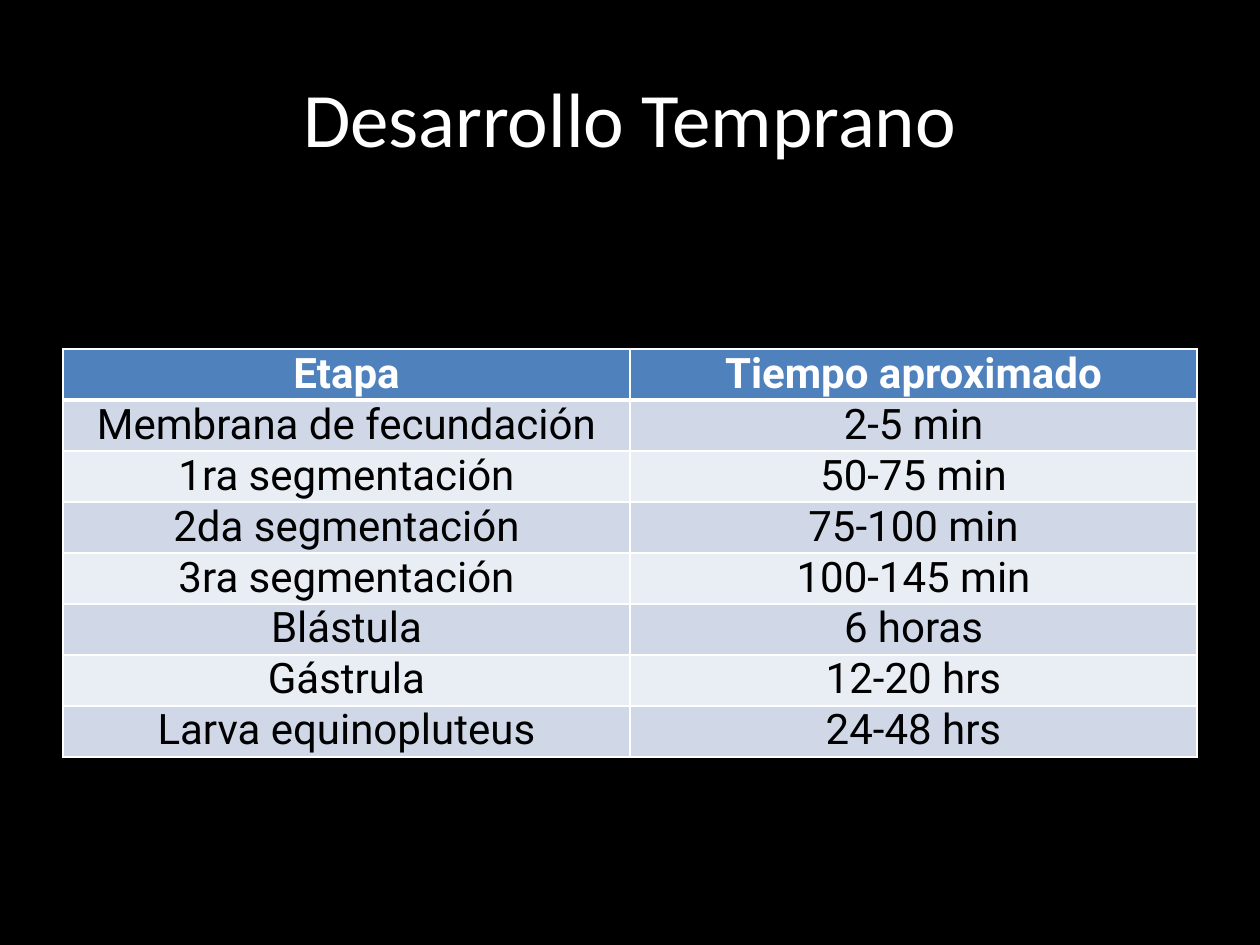
from dataclasses import dataclass

from lxml.etree import SubElement as Sub
from pptx import Presentation
from pptx.dml.color import RGBColor as Rgb
from pptx.enum.text import MSO_ANCHOR as Anchor, PP_ALIGN as Align
from pptx.oxml.ns import qn
from pptx.util import Pt


@dataclass(frozen=True)
class Theme:
    back: str = "000000"
    light: str = "FFFFFF"
    dark: str = "000000"
    head: str = "4F81BD"
    bands: tuple = ("D0D8E8", "E9EDF4")
    title_font: str = "Calibri"
    table_font: str = "Roboto"
    title_size: int = 44
    table_size: int = 24
    thin: int = 1
    thick: int = 3


THEME = Theme()
STAGES = [
    ("Etapa", "Tiempo aproximado"),
    ("Membrana de fecundación", "2-5 min"),
    ("1ra segmentación", "50-75 min"),
    ("2da segmentación", "75-100 min"),
    ("3ra segmentación", "100-145 min"),
    ("Blástula", "6 horas"),
    ("Gástrula", "12-20 hrs"),
    ("Larva equinopluteus", "24-48 hrs"),
]


def px(n):
    return round(n * 914400 / 126)


def style(frame, font, size, color, bold=False):
    para = frame.paragraphs[0]
    para.alignment = Align.CENTER
    face = para.runs[0].font
    face.name, face.size, face.bold = font, Pt(size), bold
    face.color.rgb = Rgb.from_string(color)


def border(cell, top, bottom):
    props = cell._tc.get_or_add_tcPr()
    widths = {"L": THEME.thin, "R": THEME.thin, "T": top, "B": bottom}
    for side, width in widths.items():
        line = Sub(props, qn(f"a:ln{side}"), w=str(Pt(width)))
        fill = Sub(line, qn("a:solidFill"))
        Sub(fill, qn("a:srgbClr"), val=THEME.light)


def add_title(slide, text, x, y, w, h):
    frame = slide.shapes.add_textbox(px(x), px(y), px(w), px(h)).text_frame
    frame.word_wrap = True
    frame.vertical_anchor = Anchor.MIDDLE
    frame.text = text
    style(frame, THEME.title_font, THEME.title_size, THEME.light)


def add_stages(slide, rows, x, y, w, h):
    count = len(rows)
    table = slide.shapes.add_table(
        count, len(rows[0]), px(x), px(y), px(w), px(h)).table
    for row in table.rows:
        row.height = px(h // count)

    for r, row in enumerate(rows):
        # The header stands apart by colour, weight and a thick rule below
        head = r == 0
        shade = THEME.head if head else THEME.bands[(r - 1) % 2]
        ink = THEME.light if head else THEME.dark
        top = THEME.thick if r == 1 else THEME.thin
        bottom = THEME.thick if head else THEME.thin
        for c, text in enumerate(row):
            cell = table.cell(r, c)
            cell.margin_left = cell.margin_right = px(9)
            cell.margin_top = cell.margin_bottom = 0
            border(cell, top, bottom)
            cell.fill.solid()
            cell.fill.fore_color.rgb = Rgb.from_string(shade)
            cell.text_frame.text = text
            style(cell.text_frame, THEME.table_font, THEME.table_size, ink, head)


def main():
    deck = Presentation()
    deck.slide_width, deck.slide_height = px(1260), px(945)
    slide = deck.slides.add_slide(deck.slide_layouts[6])
    # Background
    fill = slide.background.fill
    fill.solid()
    fill.fore_color.rgb = Rgb.from_string(THEME.back)
    # Title and table of stages
    add_title(slide, "Desarrollo Temprano", 63, 38, 1134, 157)
    add_stages(slide, STAGES, 63, 349, 1134, 408)
    deck.save("out.pptx")


if __name__ == "__main__":
    main()
